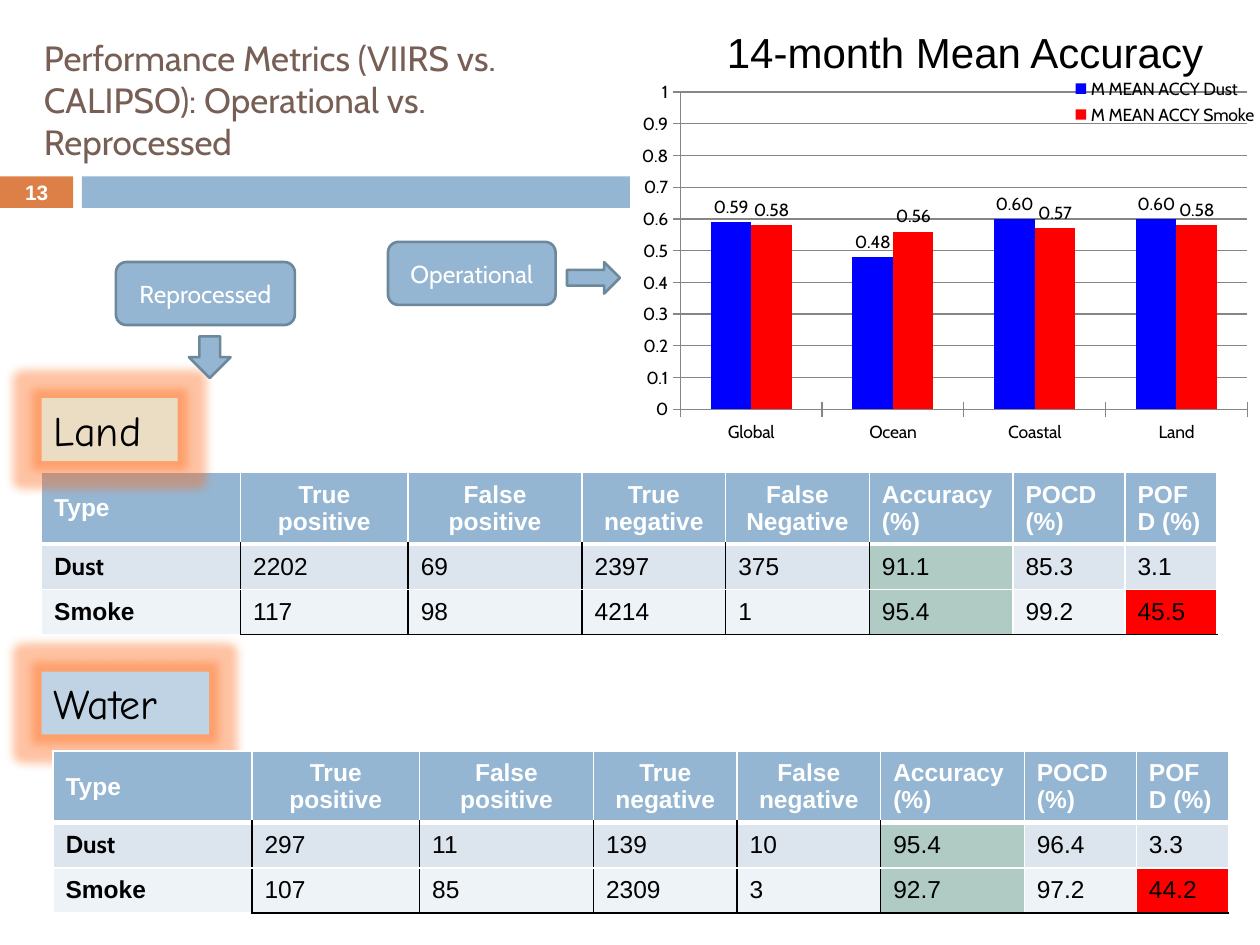
"""Builds a slide comparing operational and reprocessed detection metrics."""
from lxml import etree
from pptx import Presentation
from pptx.chart.data import CategoryChartData
from pptx.dml.color import RGBColor
from pptx.enum.chart import XL_CHART_TYPE, XL_LABEL_POSITION, XL_LEGEND_POSITION, XL_TICK_MARK
from pptx.enum.shapes import MSO_SHAPE
from pptx.enum.text import MSO_ANCHOR, PP_ALIGN
from pptx.oxml import parse_xml
from pptx.oxml.ns import nsdecls, qn
from pptx.util import Inches, Pt

RECT, ROUND = MSO_SHAPE.RECTANGLE, MSO_SHAPE.ROUNDED_RECTANGLE
RIGHT, DOWN = MSO_SHAPE.RIGHT_ARROW, MSO_SHAPE.DOWN_ARROW
LEFT, CENTER = PP_ALIGN.LEFT, PP_ALIGN.CENTER
TOP, MIDDLE = MSO_ANCHOR.TOP, MSO_ANCHOR.MIDDLE
COLUMN, CORNER = XL_CHART_TYPE.COLUMN_CLUSTERED, XL_LEGEND_POSITION.CORNER
OUTSIDE, CROSS = XL_LABEL_POSITION.OUTSIDE_END, XL_TICK_MARK.CROSS

HUES = {
    "white": "FFFFFF", "black": "000000", "brown": "775F55", "orange": "DD8047",
    "blue": "94B6D2", "edge": "6D879B", "sand": "EBDDC3", "sky": "BFD3E4",
    "band": "DCE5EE", "pale": "EEF3F7", "green": "B0CAC4", "red": "FF0000",
    "dust": "0000FF", "grid": "868686", "glow": "FF6A1A",
}
WIDTHS = [1.58, 1.33, 1.38, 1.14, 1.14, 1.14, 0.89, 0.73]


def hue(name):
    """Return the named colour."""
    return RGBColor.from_string(HUES[name])


def style(font, size, face, color, bold=False):
    """Format a font."""
    font.size, font.name, font.bold = Pt(size), face, bold
    font.color.rgb = hue(color)


def write(frame, text, size=14, face="Arial", color="black", bold=False,
          align=LEFT, anchor=TOP):
    """Put text in a frame, one paragraph for each line."""
    frame.word_wrap = True
    frame.vertical_anchor = anchor
    frame.text = text
    for para in frame.paragraphs:
        para.alignment = align
        style(para.runs[0].font, size, face, color, bold)


def label(slide, box, text, **form):
    """Add a text box."""
    area = slide.shapes.add_textbox(*map(Inches, box))
    write(area.text_frame, text, **form)


def block(slide, kind, box, fill, line=None):
    """Add a filled shape."""
    shape = slide.shapes.add_shape(kind, *map(Inches, box))
    shape.shadow.inherit = False
    shape.fill.solid()
    shape.fill.fore_color.rgb = hue(fill)
    if line:
        shape.line.color.rgb = hue(line)
        shape.line.width = Pt(1.5)
    else:
        shape.line.fill.background()
    return shape


def header(slide, left, top, width):
    """Add the title, the page number and the bar below."""
    block(slide, RECT, (left, top + 1.4, 0.58, 0.25), "orange")
    block(slide, RECT, (left + 0.65, top + 1.4, width - 0.65, 0.25), "blue")
    label(slide, (left + 0.25, top + 0.25, 4.75, 1.08),
          "Performance Metrics (VIIRS vs. CALIPSO): Operational vs. Reprocessed",
          size=20, face="Cabin", color="brown", anchor=MIDDLE)
    label(slide, (left, top + 1.39, 0.58, 0.27), "13", size=11.9, color="white",
          bold=True, align=CENTER, anchor=MIDDLE)


def pointer(slide, box, text, kind, spot):
    """Add a rounded box and the block arrow that leads from it."""
    left, top = box[:2]
    shape = block(slide, ROUND, box, "blue", "edge")
    write(shape.text_frame, text, face="Cabin", color="white", align=CENTER, anchor=MIDDLE)
    dx, dy, width, height = spot
    block(slide, kind, (left + dx, top + dy, width, height), "blue", "edge")


def tag(slide, box, text, fill):
    """Add a glowing caption for a table."""
    shape = block(slide, RECT, box, fill)
    write(shape.text_frame, text, size=24, face="Comic Neue")
    list_ = shape._element.spPr.find(qn("a:effectLst"))
    glow = etree.SubElement(list_, qn("a:glow"), rad=str(Inches(0.15)))
    color = etree.SubElement(glow, qn("a:srgbClr"), val=HUES["glow"])
    etree.SubElement(color, qn("a:alpha"), val="40000")


def border(cell, sides):
    """Draw the cell's left, right, top and bottom lines."""
    props = cell._tc.get_or_add_tcPr()
    for i, (side, (color, width)) in enumerate(zip("LRTB", sides)):
        props.insert(i, parse_xml(
            f'<a:ln{side} {nsdecls("a")} w="{Pt(width)}"><a:solidFill>'
            f'<a:srgbClr val="{HUES[color]}"/></a:solidFill></a:ln{side}>'))


def edges(row, col):
    """Return the four lines of a cell."""
    thin, dark, thick = ("white", 1), ("black", 1), ("white", 3)
    if row == 0:
        return thin, thin, thin, thick
    return (dark if 1 <= col <= 5 else thin, dark if col <= 4 else thin,
            thick if row == 1 else thin, dark if row == 2 and col else thin)


def shade(row, col):
    """Return the fill of a cell."""
    if row == 0:
        return "blue"
    if col == 5:
        return "green"
    if (row, col) == (2, 7):
        return "red"
    return "band" if row == 1 else "pale"


def metrics(slide, left, top, head, last, dust, smoke):
    """Add a table of detection counts and rates."""
    names = ["Type", "True\npositive", "False\npositive", "True\nnegative",
             f"False\n{last}", "Accuracy (%)", "POCD (%)", "POFD (%)"]
    rows = [names, ["Dust", *dust], ["Smoke", *smoke]]
    highs = [head, 0.36, 0.36]
    box = (left, top, sum(WIDTHS), sum(highs))
    table = slide.shapes.add_table(3, len(WIDTHS), *map(Inches, box)).table
    for col, width in zip(table.columns, WIDTHS):
        col.width = Inches(width)
    for r, (line, high) in enumerate(zip(rows, highs)):
        table.rows[r].height = Inches(high)
        for c, text in enumerate(line):
            cell = table.cell(r, c)
            write(cell.text_frame, text, bold=r == 0 or c == 0,
                  face="Cabin" if text == "Dust" else "Arial",
                  color="black" if r else "white",
                  align=CENTER if r == 0 and 1 <= c <= 4 else LEFT)
            cell.vertical_anchor = MIDDLE
            cell.fill.solid()
            cell.fill.fore_color.rgb = hue(shade(r, c))
            border(cell, edges(r, c))


def accuracy(slide, left, top, width, height):
    """Add the column chart and its heading."""
    data = CategoryChartData(number_format="General")
    data.categories = ["Global", "Ocean", "Coastal", "Land"]
    data.add_series("M MEAN ACCY Dust", (0.59, 0.48, 0.60, 0.60))
    data.add_series("M MEAN ACCY Smoke", (0.58, 0.56, 0.57, 0.58))
    box = map(Inches, (left, top, width, height))
    chart = slide.shapes.add_chart(COLUMN, *box, data).chart
    style(chart.font, 10, "Cabin", "black")
    chart.has_title = False
    chart.has_legend = True
    chart.legend.position = CORNER
    chart.legend.include_in_layout = False
    chart.legend._element.get_or_add_overlay().set("val", "1")
    plot = chart.plots[0]
    plot.gap_width, plot.overlap = 150, 0
    plot.vary_by_categories = False
    for series, color in zip(plot.series, ("dust", "red")):
        series.format.fill.solid()
        series.format.fill.fore_color.rgb = hue(color)
        marks = series.data_labels
        marks.show_value = True
        marks.number_format, marks.number_format_is_linked = "#,##0.00", False
        marks.position = OUTSIDE
    axis = chart.value_axis
    axis.minimum_scale, axis.maximum_scale, axis.major_unit = 0, 1, 0.1
    axis.major_gridlines.format.line.color.rgb = hue("grid")
    for line in (axis, chart.category_axis):
        line.major_tick_mark = CROSS
        line.format.line.color.rgb = hue("grid")
    area = chart._chartSpace.chart.plotArea
    for old in area.findall(qn("c:layout")):
        area.remove(old)
    parts = "".join(f'<c:{key} val="{val}"/>' for key, val in (
        ("layoutTarget", "inner"), ("xMode", "edge"), ("yMode", "edge"),
        ("x", 0.08), ("y", 0.05), ("w", 0.9), ("h", 0.84)))
    area.insert(0, parse_xml(f'<c:layout {nsdecls("c")}><c:manualLayout>{parts}'
                             '</c:manualLayout></c:layout>'))
    chart._chartSpace.find(qn("c:txPr")).addprevious(parse_xml(
        f'<c:spPr {nsdecls("c", "a")}><a:solidFill><a:srgbClr val="{HUES["white"]}"/>'
        '</a:solidFill><a:ln><a:noFill/></a:ln></c:spPr>'))
    label(slide, (left + 0.67, top - 0.42, 4.12, 0.5), "14-month Mean Accuracy", size=24)


def main():
    """Build and save the slide."""
    deck = Presentation()
    deck.slide_width, deck.slide_height = Inches(10), Inches(7.5)
    slide = deck.slides.add_slide(deck.slide_layouts[6])
    header(slide, 0, 0, 10)
    metrics(slide, 0.33, 3.75, 0.53, "Negative",
            ["2202", "69", "2397", "375", "91.1", "85.3", "3.1"],
            ["117", "98", "4214", "1", "95.4", "99.2", "45.5"])
    tag(slide, (0.33, 3.16, 1.08, 0.5), "Land", "sand")
    tag(slide, (0.33, 5.33, 1.33, 0.5), "Water", "sky")
    metrics(slide, 0.42, 5.96, 0.56, "negative",
            ["297", "11", "139", "10", "95.4", "96.4", "3.3"],
            ["107", "85", "2309", "3", "92.7", "97.2", "44.2"])
    accuracy(slide, 5, 0.58, 5, 3)
    pointer(slide, (3.08, 1.92, 1.33, 0.5), "Operational", RIGHT, (1.42, 0.16, 0.42, 0.25))
    pointer(slide, (0.92, 2.08, 1.42, 0.5), "Reprocessed", DOWN, (0.58, 0.59, 0.33, 0.33))
    deck.save("out.pptx")


if __name__ == "__main__":
    main()
